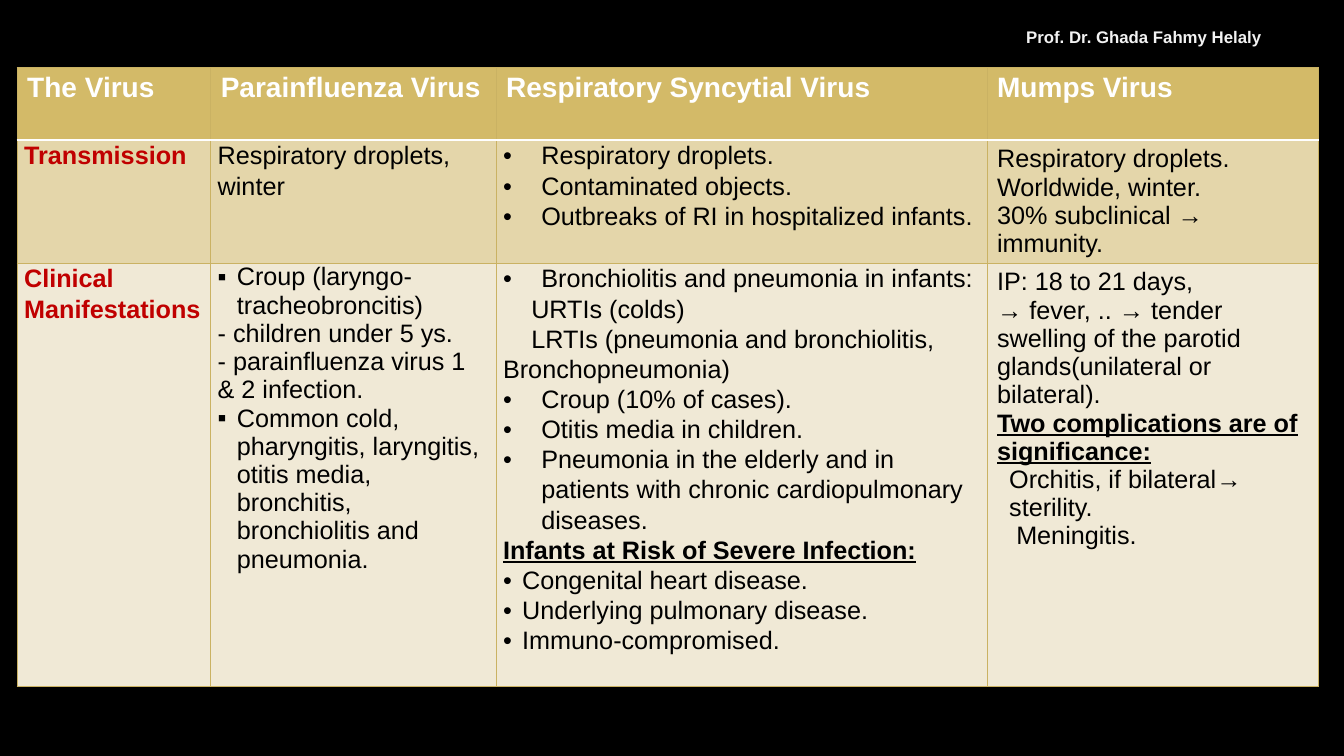
from dataclasses import dataclass

from lxml.etree import SubElement
from pptx import Presentation
from pptx.dml.color import RGBColor
from pptx.enum.text import MSO_ANCHOR
from pptx.oxml import parse_xml
from pptx.oxml.ns import nsdecls, qn
from pptx.util import Inches, Pt

COLORS = {
    "background": "000000", "author": "F2F2F2", "header": "D3BA68",
    "transmission": "E4D6AA", "clinical": "F0E9D6", "border": "CAB263",
    "white": "FFFFFF", "label": "C00000", "body": "000000",
}


@dataclass
class Layout:
    """Indents, bullet and emphasis of one kind of paragraph."""
    margin: float = 0
    indent: float = 0
    bullet: str = ""
    tab: float = 0
    level: int = 0
    bold: bool = False
    underline: bool = False


LAYOUTS = {
    "plain": Layout(),
    "bold": Layout(bold=True),
    "heading": Layout(bold=True, underline=True),
    "point": Layout(0.38, -0.38, "•", 0.5),
    "risk": Layout(0.19, -0.19, "•", 1.5, 2),
    "square": Layout(0.19, -0.19, "▪"),
    "first line": Layout(0, 0.28),
    "complication": Layout(0.12),
    "last complication": Layout(0.12, 0.07),
}

HEADERS = ["The Virus", "Parainfluenza Virus", "Respiratory Syncytial Virus", "Mumps Virus"]
TRANSMISSION = [
    [("bold", "Transmission")],
    [("plain", "Respiratory droplets, winter")],
    [("point", "Respiratory droplets."),
     ("point", "Contaminated objects."),
     ("point", "Outbreaks of RI in hospitalized infants.")],
    [("plain", "Respiratory droplets."),
     ("plain", "Worldwide, winter."),
     ("plain", "30% subclinical → immunity.")],
]
CLINICAL = [
    [("bold", "Clinical Manifestations")],
    [("square", "Croup (laryngo-tracheobroncitis)"),
     ("plain", "- children under 5 ys."),
     ("plain", "- parainfluenza virus 1 & 2 infection."),
     ("square", "Common cold, pharyngitis, laryngitis, otitis media, bronchitis, "
                "bronchiolitis and pneumonia.")],
    [("point", "Bronchiolitis and pneumonia in infants:"),
     ("first line", "URTIs (colds)"),
     ("first line", "LRTIs (pneumonia and bronchiolitis, Bronchopneumonia)"),
     ("point", "Croup (10% of cases)."),
     ("point", "Otitis media in children."),
     ("point", "Pneumonia in the elderly and in patients with chronic "
               "cardiopulmonary diseases."),
     ("heading", "Infants at Risk of Severe Infection:"),
     ("risk", "Congenital heart disease."),
     ("risk", "Underlying pulmonary disease."),
     ("risk", "Immuno-compromised.")],
    [("plain", "IP: 18 to 21 days,"),
     ("plain", "→ fever, .. → tender swelling of the parotid glands(unilateral or bilateral)."),
     ("heading", "Two complications are of significance:"),
     ("complication", "Orchitis, if bilateral→ sterility."),
     ("last complication", "Meningitis.")],
]


class VirusSlide:
    """Holds the shared style and the slide being built."""

    font = "Arial"

    def __init__(self, presentation):
        self.slide = presentation.slides.add_slide(presentation.slide_layouts[6])
        fill = self.slide.background.fill
        fill.solid()
        fill.fore_color.rgb = self.color("background")

    def color(self, name):
        """Return the named colour."""
        return RGBColor.from_string(COLORS[name])

    def add_entries(self, frame, entries, size, color, spacing=1.0):
        """Add one paragraph per entry to a text frame."""
        frame.word_wrap = True
        for number, (kind, text) in enumerate(entries):
            paragraph = frame.add_paragraph() if number else frame.paragraphs[0]
            layout = LAYOUTS[kind]
            paragraph.level = layout.level
            paragraph.line_spacing = spacing
            self.indent(paragraph, layout)
            run = paragraph.add_run()
            run.text = text
            run.font.name = self.font
            run.font.size = Pt(size)
            run.font.bold = layout.bold
            run.font.underline = layout.underline
            run.font.color.rgb = self.color(color)

    def indent(self, paragraph, layout):
        """Set the indents, bullet and tab stop of a paragraph."""
        properties = paragraph._p.get_or_add_pPr()
        properties.set("marL", str(Inches(layout.margin)))
        properties.set("indent", str(Inches(layout.indent)))
        if layout.bullet:
            SubElement(properties, qn("a:buFont"), typeface=self.font)
            SubElement(properties, qn("a:buChar"), char=layout.bullet)
        else:
            SubElement(properties, qn("a:buNone"))
        if layout.tab:
            tabs = SubElement(properties, qn("a:tabLst"))
            SubElement(tabs, qn("a:tab"), pos=str(Inches(layout.tab)), algn="l")

    def author(self, name, left, top, width, height):
        """Add the author line."""
        box = self.slide.shapes.add_textbox(*map(Inches, (left, top, width, height)))
        box.text_frame.vertical_anchor = MSO_ANCHOR.MIDDLE
        self.add_entries(box.text_frame, [("bold", name)], 12, "author")

    def table(self, left, top, widths, heights):
        """Add an empty table and return it."""
        bounds = map(Inches, (left, top, sum(widths), sum(heights)))
        table = self.slide.shapes.add_table(len(heights), len(widths), *bounds).table
        for column, width in zip(table.columns, widths):
            column.width = Inches(width)
        for row, height in zip(table.rows, heights):
            row.height = Inches(height)
        table.horz_banding = False
        return table

    def paint(self, cell, fill, **special):
        """Fill a cell and draw its four borders."""
        cell.fill.solid()
        cell.fill.fore_color.rgb = self.color(fill)
        properties = cell._tc.get_or_add_tcPr()
        for position, side in enumerate("LRTB"):
            name, width = special.get(side, ("border", 0.75))
            properties.insert(position, parse_xml(
                f'<a:ln{side} {nsdecls("a")} w="{Pt(width)}"><a:solidFill>'
                f'<a:srgbClr val="{COLORS[name]}"/></a:solidFill></a:ln{side}>'))

    def header_row(self, table, titles):
        """Fill the header row."""
        for cell, title in zip(table.rows[0].cells, titles):
            self.paint(cell, "header", B=("white", 1.25))
            self.add_entries(cell.text_frame, [("bold", title)], 20, "white")

    def body_row(self, table, row, fill, contents, spacings, **special):
        """Fill a body row whose first cell is its label."""
        for column, entries in enumerate(contents):
            cell = table.cell(row, column)
            self.paint(cell, fill, **special)
            if column < 3:
                cell.margin_left = cell.margin_right = Inches(0.07)
                cell.margin_top = cell.margin_bottom = Inches(0)
            color = "body" if column else "label"
            self.add_entries(cell.text_frame, entries, 18, color, spacings[column])


def main():
    """Build and save the slide."""
    presentation = Presentation()
    presentation.slide_width = Inches(13.33)
    presentation.slide_height = Inches(7.5)
    page = VirusSlide(presentation)
    viruses = page.table(0.17, 0.67, [1.92, 2.83, 4.87, 3.29], [0.72, 1.22, 4.2])
    page.header_row(viruses, HEADERS)
    page.body_row(viruses, 1, "transmission", TRANSMISSION, [1.07, 1.07, 1.07, 1],
                  T=("white", 1.25))
    page.body_row(viruses, 2, "clinical", CLINICAL, [1.07, 1, 1.07, 1])
    page.author("Prof. Dr. Ghada Fahmy Helaly", 10.08, 0.17, 3, 0.4)
    presentation.save("out.pptx")


if __name__ == "__main__":
    main()
